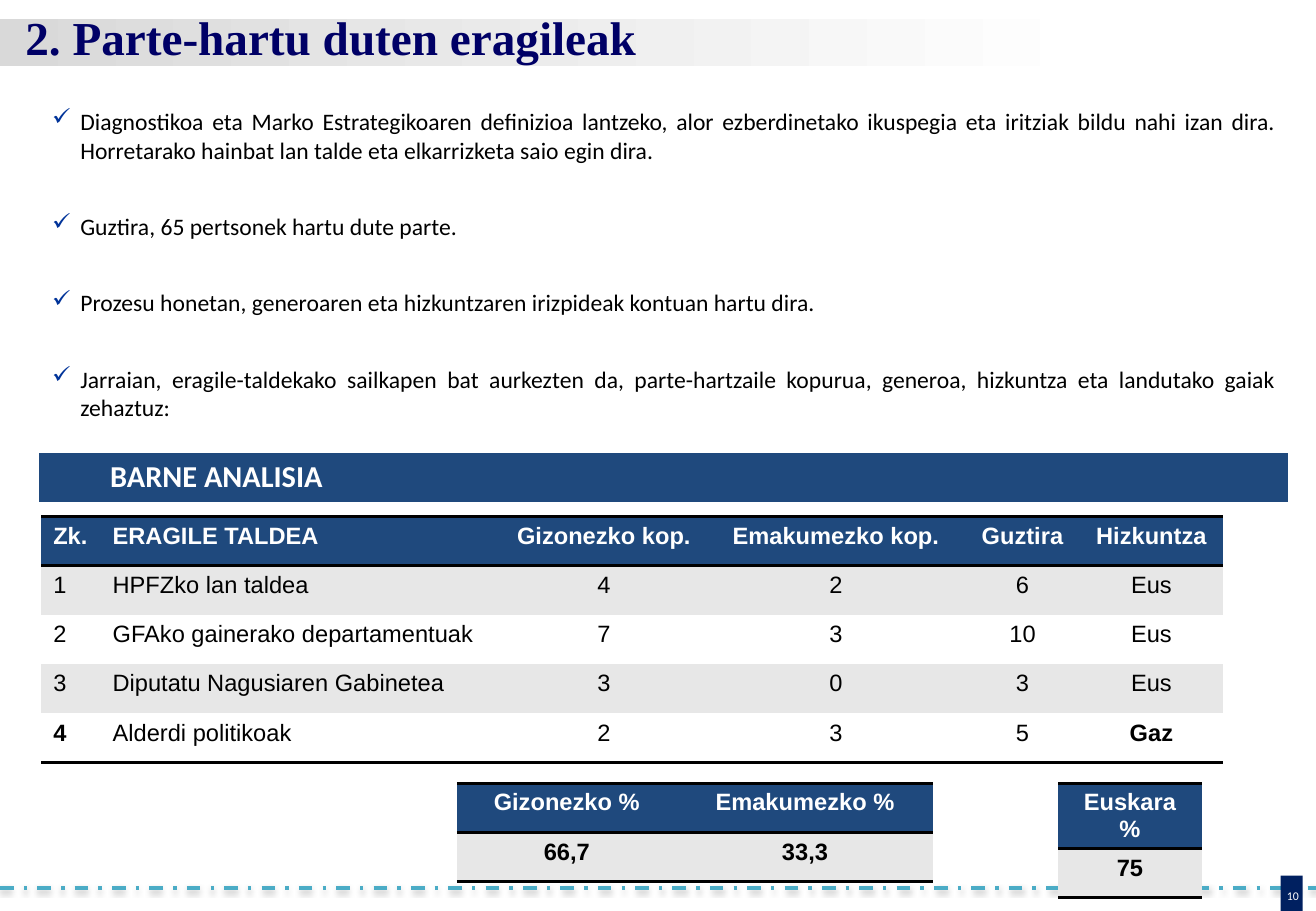
import pptx
import pptx.util
import pptx.dml.color
import pptx.enum.dml
import pptx.enum.shapes
import pptx.enum.text
import pptx.oxml
import pptx.oxml.ns

Cm, Pt = pptx.util.Cm, pptx.util.Pt
ALIGN = pptx.enum.text.PP_ALIGN
ANCHOR = pptx.enum.text.MSO_ANCHOR
PLAIN = "{2D5ABB26-0587-4C30-8999-92F81FD0307C}"

HUES = {
    "white": "FFFFFF", "black": "000000", "head": "1F497D", "band": "E7E7E7",
    "title": "000066", "tick": "003399", "page": "002060", "dash": "4BACC6",
    "grey": "D9D9D9",
}

POINTS = [
    "Diagnostikoa eta Marko Estrategikoaren definizioa lantzeko, alor ezberdinetako "
    "ikuspegia eta iritziak bildu nahi izan dira. Horretarako hainbat lan talde eta "
    "elkarrizketa saio egin dira.",
    "Guztira, 65 pertsonek hartu dute parte.",
    "Prozesu honetan, generoaren eta hizkuntzaren irizpideak kontuan hartu dira.",
    "Jarraian, eragile-taldekako sailkapen bat aurkezten da, parte-hartzaile kopurua, "
    "generoa, hizkuntza eta landutako gaiak zehaztuz:",
]

GROUPS = [
    ["Zk.", "ERAGILE TALDEA", "Gizonezko kop.", "Emakumezko kop.", "Guztira", "Hizkuntza"],
    ["1", "HPFZko lan taldea", "4", "2", "6", "Eus"],
    ["2", "GFAko gainerako departamentuak", "7", "3", "10", "Eus"],
    ["3", "Diputatu Nagusiaren Gabinetea", "3", "0", "3", "Eus"],
    ["4", "Alderdi politikoak", "2", "3", "5", "Gaz"],
]


def tint(name):
    return pptx.dml.color.RGBColor.from_string(HUES[name])


def node(xml):
    """Parse a fragment, declaring the drawing namespace at its first space."""
    return pptx.oxml.parse_xml(xml.replace(" ", f' {pptx.oxml.ns.nsdecls("a")} ', 1))


def write(frame, text, size=14, font="Arial", hue="black", bold=False,
          align=ALIGN.LEFT, indent=0, tick=False, gap=0):
    """Fill a text frame; a list of strings gives one paragraph each."""
    lines = [text] if isinstance(text, str) else text
    for i, line in enumerate(lines):
        para = frame.add_paragraph() if i else frame.paragraphs[0]
        props = para._p.get_or_add_pPr()
        if indent:
            props.set("marL", str(Cm(indent)))
        if tick:
            props.set("indent", str(-Cm(indent)))
            props.append(node(f'<a:buClr ><a:srgbClr val="{HUES["tick"]}"/></a:buClr>'))
            props.append(node('<a:buChar char="✓"/>'))
        para.alignment = align
        if i:
            para.space_before = Pt(gap)
        run = para.add_run()
        run.text = line
        run.font.size, run.font.name, run.font.bold = Pt(size), font, bold
        run.font.color.rgb = tint(hue)


class Page:
    def __init__(self, deck):
        self.shapes = deck.slides.add_slide(deck.slide_layouts[5]).shapes

    def rule(self, y, width):
        line = self.shapes.add_connector(
            pptx.enum.shapes.MSO_CONNECTOR.STRAIGHT, 0, Cm(y), Cm(width), Cm(y))
        line.line.color.rgb = tint("dash")
        line.line.width = Pt(2)
        line.line.dash_style = pptx.enum.dml.MSO_LINE.DASH_DOT
        line._element.spPr.append(node(
            f'<a:effectLst ><a:outerShdw blurRad="{Pt(3.1)}" dist="{Pt(1.6)}" dir="5400000">'
            f'<a:srgbClr val="{HUES["black"]}"><a:alpha val="38000"/></a:srgbClr>'
            '</a:outerShdw></a:effectLst>'))

    def rect(self, box, *hues):
        """One colour gives a solid fill, two give a gradient from left to right."""
        shape = self.shapes.add_shape(
            pptx.enum.shapes.MSO_SHAPE.RECTANGLE, *map(Cm, box))
        shape.shadow.inherit = False
        shape.line.fill.background()
        if len(hues) == 1:
            shape.fill.solid()
            shape.fill.fore_color.rgb = tint(hues[0])
            return
        shape.fill.gradient()
        shape.fill.gradient_angle = 0
        for stop, hue in zip(shape.fill.gradient_stops, hues):
            stop.color.rgb = tint(hue)

    def frame(self, shape, inset, anchor):
        frame = shape.text_frame
        frame.word_wrap = True
        frame.auto_size = pptx.enum.text.MSO_AUTO_SIZE.NONE
        frame.vertical_anchor = anchor
        (frame.margin_left, frame.margin_top,
         frame.margin_right, frame.margin_bottom) = map(Cm, inset)
        return frame

    def text(self, box, text, inset=(0.25, 0.13, 0.25, 0.13), anchor=ANCHOR.TOP, **style):
        shape = self.shapes.add_textbox(*map(Cm, box))
        write(self.frame(shape, inset, anchor), text, **style)

    def title(self, box, text, **style):
        """Format the title placeholder and bring it to the front."""
        shape = self.shapes.title
        shape.left, shape.top, shape.width, shape.height = map(Cm, box)
        write(self.frame(shape, (0.53, 0.1, 0.1, 0.1), ANCHOR.BOTTOM), text, **style)
        self.shapes._spTree.append(shape._element)

    def grid(self, left, top, widths, high, count):
        table = self.shapes.add_table(
            count, len(widths), Cm(left), Cm(top), Cm(sum(widths)), Cm(high * count)).table
        table.first_row = table.horz_banding = False
        table._tbl.tblPr.find(pptx.oxml.ns.qn("a:tableStyleId")).text = PLAIN
        for col, width in zip(table.columns, widths):
            col.width = Cm(width)
        for row in table.rows:
            row.height = Cm(high)
        return table

    def cell(self, cell, text, fill, edges="", **style):
        for edge in edges:
            cell._tc.get_or_add_tcPr().append(node(
                f'<a:ln{edge} w="{Pt(2)}"><a:solidFill><a:srgbClr val="{HUES["black"]}"/>'
                f'</a:solidFill></a:ln{edge}>'))
        cell.fill.solid()
        cell.fill.fore_color.rgb = tint(fill)
        write(cell.text_frame, text, **style)

    def banner(self, left, top, width, high, text):
        cell = self.grid(left, top, [width], high, 1).cell(0, 0)
        cell.vertical_anchor = ANCHOR.MIDDLE
        self.cell(cell, text, "head", size=18, font="Calibri", hue="white",
                  bold=True, indent=1.24)

    def data(self, left, top, widths, rows, strong, flush=0):
        """Banded table; strong holds bold (row, column) pairs, flush counts left columns."""
        table = self.grid(left, top, widths, 1.03, len(rows))
        for r, row in enumerate(rows):
            head = r == 0
            fill = "head" if head else "band" if r % 2 else "white"
            edges = "TB" if head else "B" if r == len(rows) - 1 else ""
            for c, text in enumerate(row):
                self.cell(table.cell(r, c), text, fill, edges,
                          hue="white" if head else "black",
                          bold=head or (r, c) in strong,
                          align=ALIGN.LEFT if c < flush else ALIGN.CENTER)


def main():
    deck = pptx.Presentation()
    deck.slide_width, deck.slide_height = Cm(27.51), Cm(19.05)
    page = Page(deck)
    page.rule(18.57, 27.51)
    page.rect((26.77, 18.31, 0.46, 0.76), "page")
    page.text((26.54, 18.31, 0.97, 0.58), "10", (0, 0, 0, 0), ANCHOR.BOTTOM,
              size=7, font="Calibri", hue="white", align=ALIGN.CENTER)
    page.rect((0, 0.4, 22.96, 0.99), "grey", "white")
    page.banner(0.81, 9.47, 26.11, 1.02, "BARNE ANALISIA")
    page.data(0.86, 10.8, [1.24, 8.38, 4.29, 5.41, 2.39, 3], GROUPS,
              {(4, 0), (4, 5)}, flush=2)
    page.data(9.55, 16.38, [4.6, 5.36],
              [["Gizonezko %", "Emakumezko %"], ["66,7", "33,3"]], {(1, 0), (1, 1)})
    page.data(22.12, 16.38, [3], [["Euskara %"], ["75"]], {(1, 0)})
    page.text((0.84, 2.11, 26.09, 6.93), POINTS, font="Calibri", align=ALIGN.JUSTIFY,
              indent=0.59, tick=True, gap=28.5)
    page.title((0, 0.2, 22.89, 1.27), "2. Parte-hartu duten eragileak",
               size=28, font="Times New Roman", hue="title", bold=True)
    deck.save("out.pptx")


if __name__ == "__main__":
    main()
